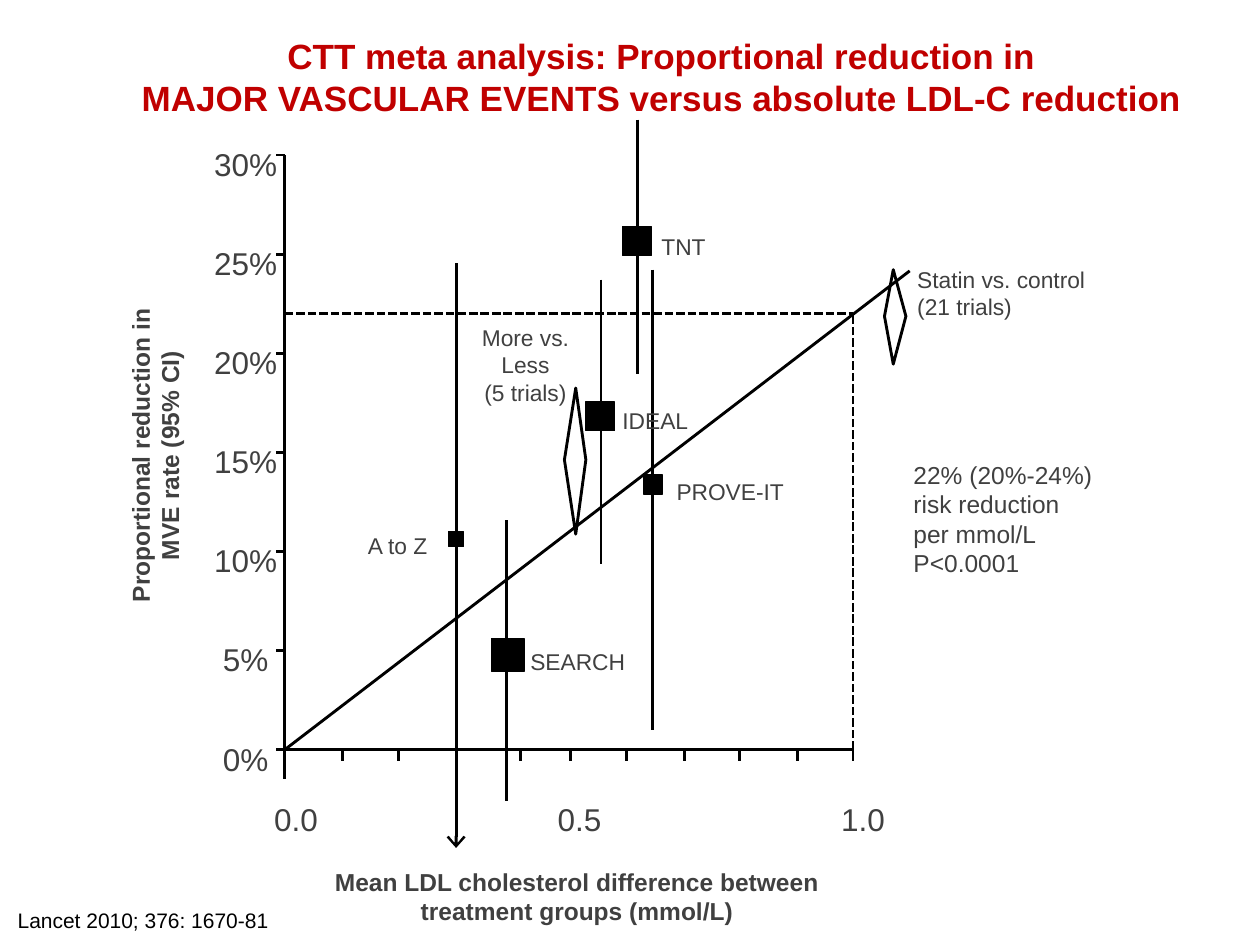
from lxml import etree
from pptx import Presentation
from pptx.dml.color import RGBColor
from pptx.enum.dml import MSO_LINE_DASH_STYLE as Dash
from pptx.enum.shapes import MSO_CONNECTOR as Connector, MSO_SHAPE as Shape
from pptx.enum.text import MSO_ANCHOR as Anchor, MSO_AUTO_SIZE as AutoSize, PP_ALIGN as Align
from pptx.oxml.ns import qn
from pptx.util import Inches, Pt

BLACK, GREY, RED = "000000", "404040", "C00000"
LINE_WIDTH = Pt(1.63)
color = RGBColor.from_string

deck = Presentation()
deck.slide_width, deck.slide_height = Inches(10), Inches(7.5)
page = deck.slides.add_slide(deck.slide_layouts[5])


def write(left, top, width, height, text, size=13, hue=GREY, bold=False,
          align=Align.LEFT, box=None):
    """Put text, one paragraph per line, in a new text box or a given one."""
    box = box or page.shapes.add_textbox(0, 0, 0, 0)
    place = {"left": left, "top": top, "width": width, "height": height}
    for name, value in place.items():
        setattr(box, name, Inches(value))
    frame = box.text_frame
    frame_format = {"margin_left": 0, "margin_top": 0, "margin_right": 0,
                    "margin_bottom": 0, "word_wrap": True,
                    "auto_size": AutoSize.NONE, "vertical_anchor": Anchor.TOP}
    for name, value in frame_format.items():
        setattr(frame, name, value)
    frame.text = text
    font_format = {"name": "Arial", "size": Pt(size), "bold": bold}
    for para in frame.paragraphs:
        para.alignment = align
        for span in para.runs:
            for name, value in font_format.items():
                setattr(span.font, name, value)
            span.font.color.rgb = color(hue)
    return box


def draw_line(x1, y1, x2, y2, dash=None):
    """Draw a straight black line without a shadow."""
    line = page.shapes.add_connector(
        Connector.STRAIGHT, Inches(x1), Inches(y1), Inches(x2), Inches(y2))
    line.line.color.rgb = color(BLACK)
    line.line.width = LINE_WIDTH
    if dash:
        line.line.dash_style = dash
    etree.SubElement(line._element.spPr, qn("a:effectLst"))
    return line


# Title
write(1.09, 0.27, 8.32, 0.67,
      "CTT meta analysis: Proportional reduction in\n"
      "MAJOR VASCULAR EVENTS versus absolute LDL-C reduction",
      20, RED, True, Align.CENTER, page.shapes.title)

# Axes
x_zero, x_one, y_zero, y_top = 2.26, 6.77, 5.95, 1.23
draw_line(x_zero, y_zero, x_one, y_zero)
draw_line(x_zero, 6.18, x_zero, y_top)
for x in (2.26, 2.72, 3.16, 3.62, 4.13, 4.53, 4.97, 5.43, 5.87, 6.33, 6.77):
    draw_line(x, y_zero, x, y_zero + 0.09)

# Axis labels
y_step = (y_zero - y_top) / 6
for i in range(7):
    y = y_zero - i * y_step
    draw_line(x_zero, y, x_zero - 0.07, y)
    write(1.6, y - 0.08, 0.7, 0.3, f"{i * 5}%", 18, align=Align.CENTER)
for i, label in enumerate(("0.0", "0.5", "1.0")):
    write(2 + i * 2.25, 6.35, 0.7, 0.3, label, 18, align=Align.CENTER)

# Axis titles
y_title = write(0.03, 3.38, 2.4, 0.47,
                "Proportional reduction in\nMVE rate (95% CI)",
                14, bold=True, align=Align.CENTER)
y_title.rotation = 270
write(1.61, 6.88, 5.94, 0.47,
      "Mean LDL cholesterol difference between\ntreatment groups (mmol/L)",
      14, bold=True, align=Align.CENTER)

# Summary diamonds: left, middle and right x, then top, middle and bottom y
for left, middle, right, top, center, bottom in (
        (4.48, 4.57, 4.65, 3.08, 3.65, 4.24),
        (7.02, 7.09, 7.19, 2.14, 2.51, 2.89)):
    corners = [(left, center), (middle, bottom), (right, center)]
    builder = page.shapes.build_freeform(Inches(middle), Inches(top), scale=1.0)
    builder.add_line_segments([(Inches(x), Inches(y)) for x, y in corners], close=True)
    diamond = builder.convert_to_shape()
    diamond.shadow.inherit = False
    diamond.fill.background()
    diamond.line.color.rgb = color(BLACK)
    diamond.line.width = LINE_WIDTH
write(3.72, 2.57, 0.9, 0.66, "More vs.\nLess\n(5 trials)", align=Align.CENTER)
write(7.28, 2.11, 1.5, 0.45, "Statin vs. control\n(21 trials)")

# Regression line and guides at 1 mmol/L
draw_line(x_zero, y_zero, 7.22, 2.15)
draw_line(x_one, y_zero, x_one, 2.49, Dash.SQUARE_DOT)
draw_line(x_zero, 2.49, x_one, 2.49, Dash.SQUARE_DOT)

# Trials: name, label left and top, interval x, top and bottom, marker left, top and size
trials = (
    ("PROVE-IT", 5.37, 3.79, 5.18, 2.14, 5.79, 5.11, 3.77, 0.15),
    ("TNT", 5.25, 1.85, 5.06, 0.95, 2.97, 4.94, 1.8, 0.23),
    ("IDEAL", 4.94, 3.23, 4.77, 2.22, 4.48, 4.65, 3.19, 0.23),
    ("SEARCH", 4.21, 5.14, 4.02, 4.13, 6.36, 3.9, 5.07, 0.26),
    ("A to Z", 2.92, 4.22, 3.62, 2.09, 6.73, 3.56, 4.22, 0.12),
)
for name, label_x, label_y, x, top, bottom, left, upper, size in trials:
    marker = page.shapes.add_shape(
        Shape.RECTANGLE, Inches(left), Inches(upper), Inches(size), Inches(size))
    marker.shadow.inherit = False
    marker.fill.solid()
    marker.fill.fore_color.rgb = color(BLACK)
    marker.line.color.rgb = color(BLACK)
    marker.line.width = 0
    interval = draw_line(x, top, x, bottom)
    write(label_x, label_y, 1, 0.22, name)

# The last interval, A to Z, runs off the scale
etree.SubElement(interval.line._get_or_add_ln(), qn("a:tailEnd"),
                 type="arrow", w="lg", len="med")

# Result and citation
write(7.25, 3.65, 1.6, 0.94,
      "22% (20%-24%)\nrisk reduction\nper mmol/L\nP<0.0001", 14)
write(0.14, 7.2, 5.08, 0.2, "Lancet 2010; 376: 1670-81", 12, BLACK)

deck.save("out.pptx")
